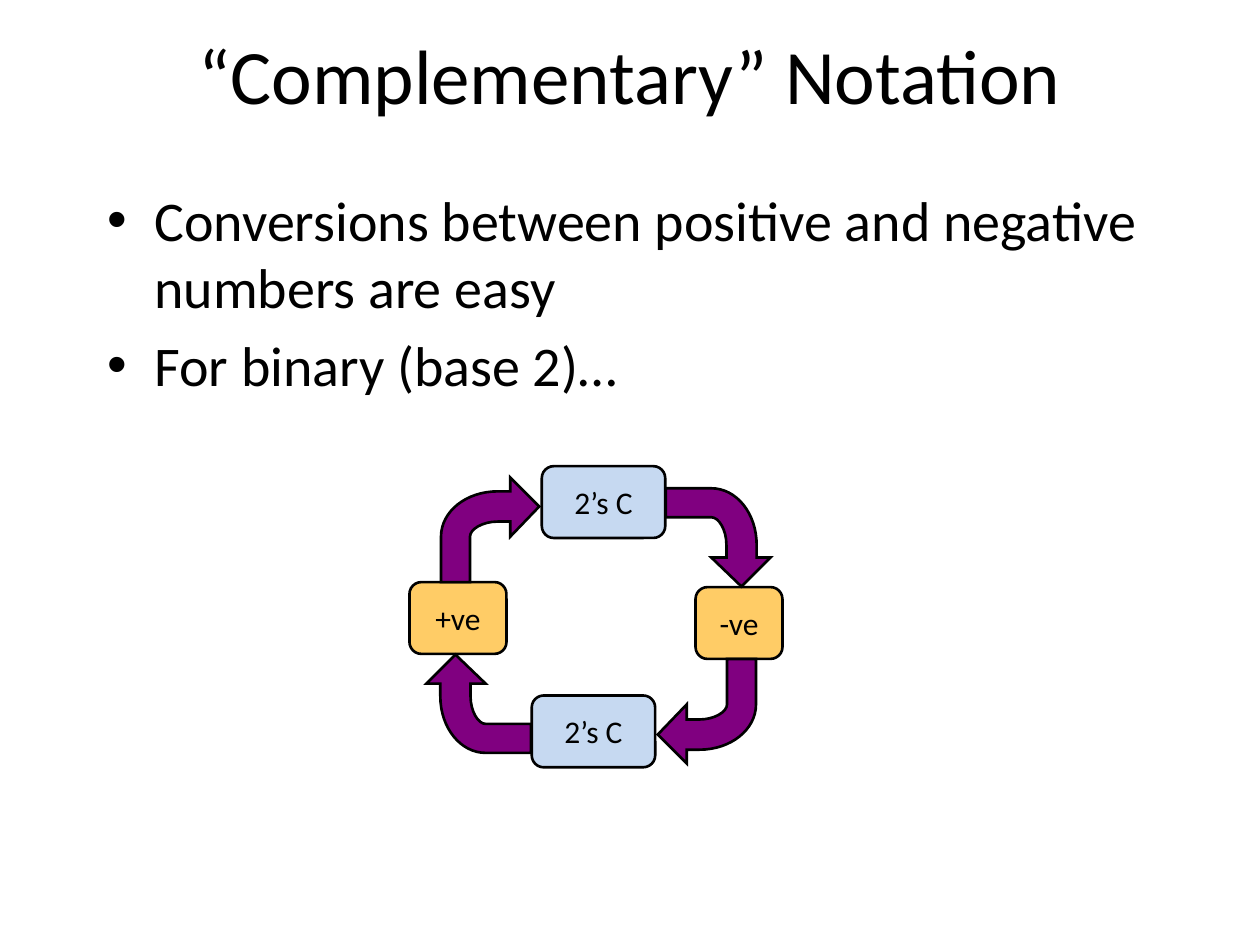
from dataclasses import dataclass

from lxml import etree
from pptx import Presentation
from pptx.dml.color import RGBColor
from pptx.enum.shapes import MSO_SHAPE
from pptx.enum.text import MSO_ANCHOR, MSO_AUTO_SIZE, PP_ALIGN
from pptx.oxml.ns import qn
from pptx.util import Inches, Pt

ROUNDED = MSO_SHAPE.ROUNDED_RECTANGLE
MIDDLE = MSO_ANCHOR.MIDDLE
CENTER = PP_ALIGN.CENTER
NO_FIT = MSO_AUTO_SIZE.NONE


@dataclass(frozen=True)
class Theme:
    font: str = "Calibri"
    ink: RGBColor = RGBColor(0x00, 0x00, 0x00)
    sign: RGBColor = RGBColor(0xFF, 0xCC, 0x66)
    complement: RGBColor = RGBColor(0xC6, 0xD9, 0xF1)
    arrow: RGBColor = RGBColor(0x80, 0x00, 0x80)
    title_size: Pt = Pt(44)
    body_size: Pt = Pt(32)
    label_size: Pt = Pt(18)
    outline: Pt = Pt(1.5)


theme = Theme()


def add_span(para, text, size):
    span = para.add_run()
    span.text = text
    span.font.name = theme.font
    span.font.size = size
    span.font.color.rgb = theme.ink


def paint(shape, color):
    shape.shadow.inherit = False
    shape.fill.solid()
    shape.fill.fore_color.rgb = color
    shape.line.color.rgb = theme.ink
    shape.line.width = theme.outline


deck = Presentation()
deck.slide_width, deck.slide_height = Inches(10), Inches(7.5)
slide = deck.slides.add_slide(deck.slide_layouts[1])

# Title and bullet list
title, body = slide.placeholders
for holder, top, height in ((title, 0.17, 0.83), (body, 1.42, 4.5)):
    holder.left, holder.top = Inches(0.75), Inches(top)
    holder.width, holder.height = Inches(8.5), Inches(height)
    holder.text_frame.auto_size = NO_FIT

title.text_frame.vertical_anchor = MIDDLE
heading = title.text_frame.paragraphs[0]
heading.alignment = CENTER
add_span(heading, "“Complementary” Notation", theme.title_size)

bullets = (
    "Conversions between positive and negative numbers are easy",
    "For binary (base 2)…",
)
for index, text in enumerate(bullets):
    frame = body.text_frame
    para = frame.add_paragraph() if index else frame.paragraphs[0]
    add_span(para, text, theme.body_size)

# Boxes of the conversion cycle
boxes = (
    ("+ve", 3.25, 4.62, 0.77, theme.sign),
    ("-ve", 5.52, 4.66, 0.69, theme.sign),
    ("2’s C", 4.3, 3.7, 0.98, theme.complement),
    ("2’s C", 4.22, 5.52, 0.98, theme.complement),
)
for label, left, top, width, color in boxes:
    box = slide.shapes.add_shape(
        ROUNDED, Inches(left), Inches(top), Inches(width), Inches(0.57))
    paint(box, color)
    frame = box.text_frame
    frame.word_wrap = False
    frame.auto_size = NO_FIT
    frame.vertical_anchor = MIDDLE
    para = frame.paragraphs[0]
    para.alignment = CENTER
    add_span(para, label, theme.label_size)

# One bent arrow, turned by a quarter for each step of the cycle
outline = (
    (0.78, 0.23), (0.55, 0), (0.55, 0.11), (0.45, 0.11),
    (0.2, 0.11), (0, 0.27), (0, 0.47),  # outer bend
    (0, 0.83), (0.23, 0.83), (0.23, 0.47),
    (0.23, 0.41), (0.33, 0.35), (0.45, 0.35),  # inner bend
    (0.55, 0.35), (0.55, 0.47),
)
bend_starts = (3, 9)  # line segments that open the outer and inner bend
tip, *corners = [(Inches(x), Inches(y)) for x, y in outline]
arrow_places = ((3.5, 3.79), (5.31, 3.85), (5.22, 5.23), (3.41, 5.17))
for quarter, (left, top) in enumerate(arrow_places):
    builder = slide.shapes.build_freeform(*tip)
    builder.add_line_segments(corners, close=True)
    arrow = builder.convert_to_shape(Inches(left), Inches(top))
    arrow.rotation = 90 * quarter
    paint(arrow, theme.arrow)

    # Each bend's three segments hold the control points of one curve
    segments = list(arrow.element.iter(qn("a:lnTo")))
    for start in bend_starts:
        bend = segments[start:start + 3]
        curve = etree.Element(qn("a:cubicBezTo"))
        bend[0].addprevious(curve)
        for segment in bend:
            curve.append(segment[0])
            segment.getparent().remove(segment)

    line = arrow.element.spPr.find(qn("a:ln"))
    etree.SubElement(line, qn("a:miter"), lim="800000")

deck.save("out.pptx")
